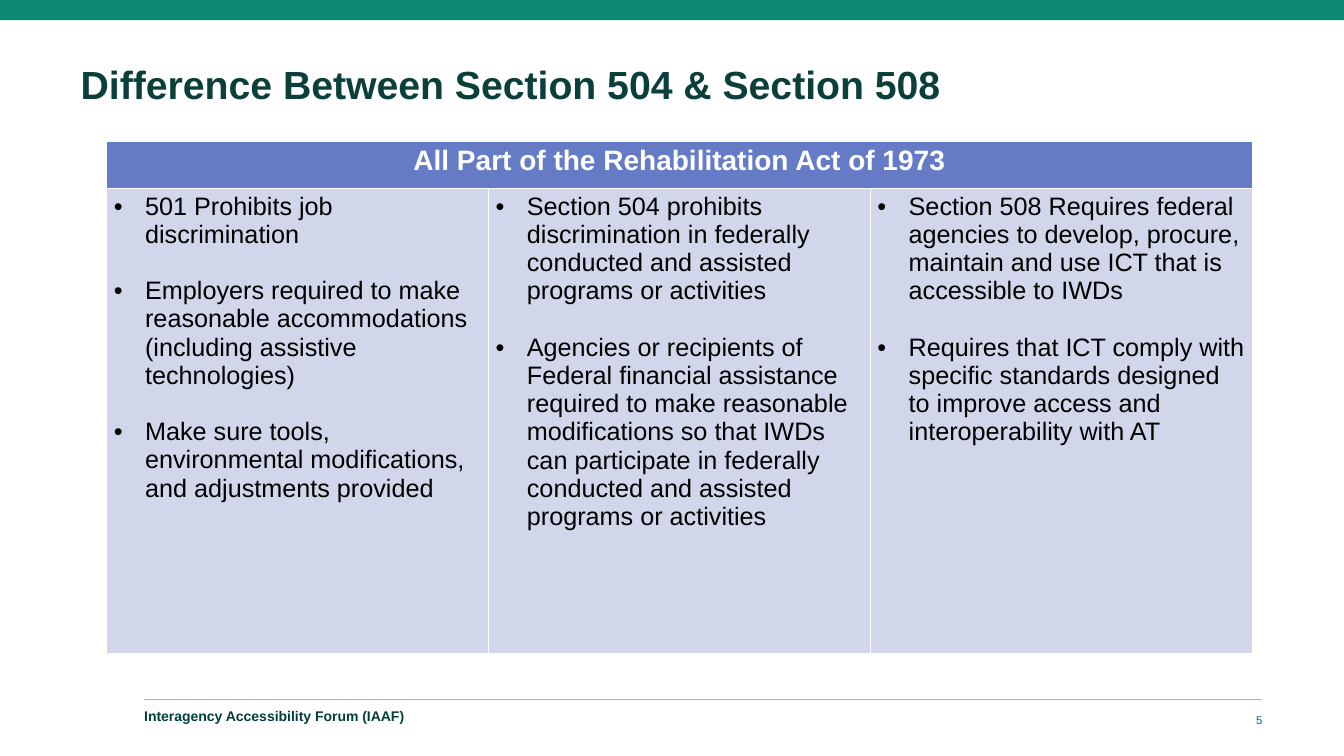
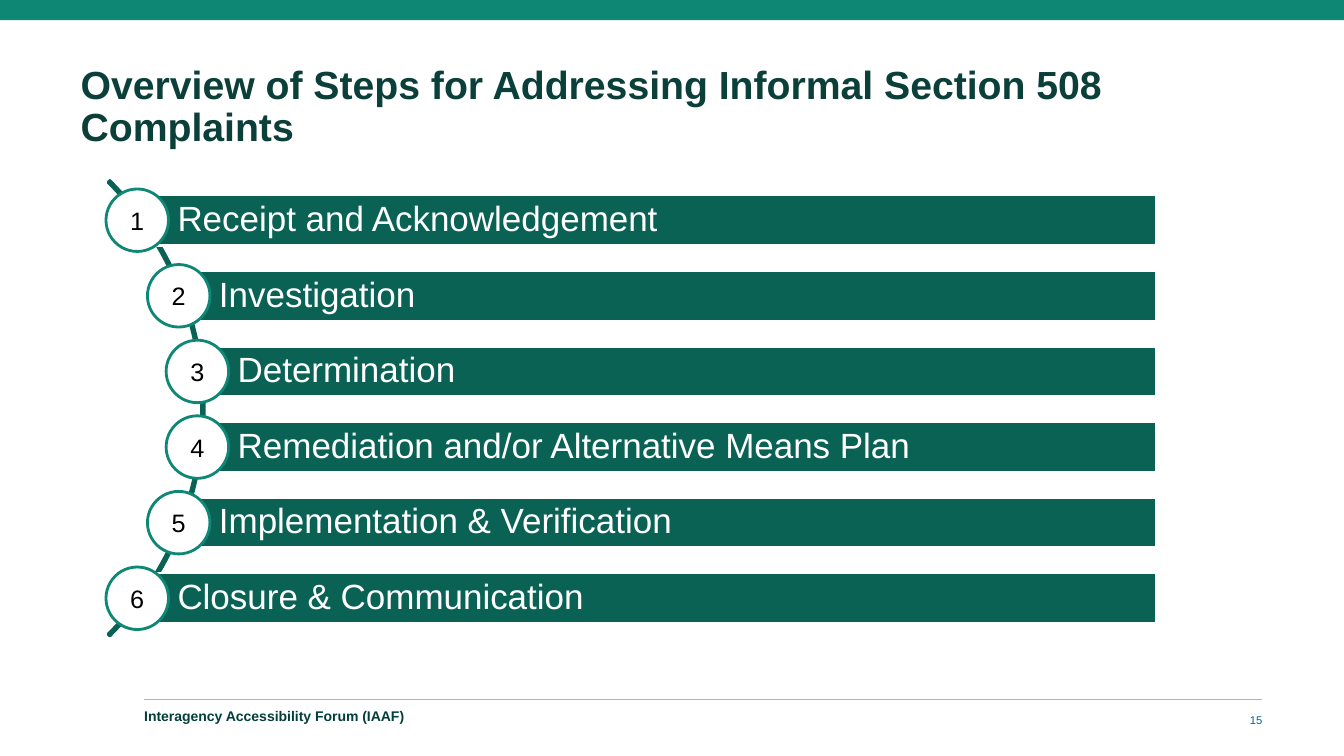
from math import sqrt

from lxml import etree
from pptx import Presentation
from pptx.dml.color import RGBColor
from pptx.enum.shapes import MSO_CONNECTOR, MSO_SHAPE
from pptx.enum.text import MSO_ANCHOR, MSO_AUTO_SIZE, PP_ALIGN
from pptx.oxml.ns import qn
from pptx.util import Inches, Pt

LEFT, CENTER, RIGHT = PP_ALIGN.LEFT, PP_ALIGN.CENTER, PP_ALIGN.RIGHT
TOP, MIDDLE = MSO_ANCHOR.TOP, MSO_ANCHOR.MIDDLE
RECTANGLE, OVAL, BLOCK_ARC = MSO_SHAPE.RECTANGLE, MSO_SHAPE.OVAL, MSO_SHAPE.BLOCK_ARC

FONT = "Arial"
WHITE, BLACK = "FFFFFF", "000000"
TEAL, DEEP_TEAL = "0E8775", "0A6255"
TITLE_INK, FOOTER_INK, NUMBER_INK = "0B3F3A", "033F3A", "006197"
RULE_GRAY, HEADER_BLUE, CELL_BLUE = "B2B2B2", "667BC6", "D2D6EA"

SLIDE_WIDTH, SLIDE_HEIGHT = 13.33, 7.5
FOOTER_LEFT, FOOTER_RIGHT, FOOTER_TOP = 1.43, 12.52, 7.04

FOOTER = "Interagency Accessibility Forum (IAAF)"
SECTIONS_TITLE = "Difference Between Section 504 & Section 508"
SECTIONS_HEADER = "All Part of the Rehabilitation Act of 1973"
SECTIONS = [
    ["501 Prohibits job discrimination",
     "Employers required to make reasonable accommodations (including assistive technologies)",
     "Make sure tools, environmental modifications, and adjustments provided"],
    ["Section 504 prohibits discrimination in federally conducted and assisted programs "
     "or activities",
     "Agencies or recipients of Federal financial assistance required to make reasonable "
     "modifications so that IWDs can participate in federally conducted and assisted "
     "programs or activities"],
    ["Section 508 Requires federal agencies to develop, procure, maintain and use ICT "
     "that is accessible to IWDs",
     "Requires that ICT comply with specific standards designed to improve access and "
     "interoperability with AT"],
]
STEPS_TITLE = "Overview of Steps for Addressing Informal Section 508 Complaints"
STEPS = [
    "Receipt and Acknowledgement",
    "Investigation",
    "Determination",
    "Remediation and/or Alternative Means Plan",
    "Implementation & Verification",
    "Closure & Communication",
]


def color(value):
    return RGBColor.from_string(value)


def inches(*values):
    return [Inches(value) for value in values]


def style(para, size, ink, bold=False, align=LEFT, spacing=1.0):
    para.alignment, para.line_spacing = align, spacing
    font = para.font
    font.name, font.size, font.bold = FONT, Pt(size), bold
    font.color.rgb = color(ink)


def set_frame(frame, anchor, margins):
    frame.word_wrap, frame.vertical_anchor = True, anchor
    (frame.margin_left, frame.margin_top,
     frame.margin_right, frame.margin_bottom) = inches(*margins)


def write(frame, text, size, ink, anchor=MIDDLE, margins=(0, 0, 0, 0), **options):
    set_frame(frame, anchor, margins)
    frame.text = text
    style(frame.paragraphs[0], size, ink, **options)


def add_shape(page, kind, box, fill, line=None):
    shape = page.shapes.add_shape(kind, *inches(*box))
    shape.shadow.inherit = False
    shape.fill.solid()
    shape.fill.fore_color.rgb = color(fill)
    if line:
        shape.line.color.rgb, shape.line.width = color(line), Pt(2)
    else:
        shape.line.fill.background()
    return shape


def add_label(page, box, *args, **options):
    label = page.shapes.add_textbox(*inches(*box))
    write(label.text_frame, *args, **options)
    return label


def add_shared_parts(page):
    """Draw the band, rule and footer, then move them to the layout."""
    layout = page.slide_layout
    band = add_shape(page, RECTANGLE, (0, 0, SLIDE_WIDTH, 0.2), TEAL)
    rule = page.shapes.add_connector(
        MSO_CONNECTOR.STRAIGHT, *inches(FOOTER_LEFT, 6.94, FOOTER_RIGHT, 6.94))
    rule.line.color.rgb, rule.line.width = color(RULE_GRAY), Pt(0.75)
    etree.SubElement(rule._element.spPr, qn("a:effectLst"))
    footer = add_label(page, (FOOTER_LEFT, FOOTER_TOP, 7.01, 0.19), FOOTER, 10,
                       FOOTER_INK, bold=True, spacing=0.5)
    for number, part in enumerate((band, rule, footer), start=20):
        part._element.xpath(".//p:cNvPr")[0].set("id", str(number))
        layout.shapes._spTree.append(part._element)


def add_page(deck, title, title_height, number):
    page = deck.slides.add_slide(deck.slide_layouts.get_by_name("Title Only"))
    heading = page.shapes.title
    heading.left, heading.top, heading.width, heading.height = inches(
        0.8, 0.6, 11.73, title_height)
    write(heading.text_frame, title, 28, TITLE_INK, anchor=TOP,
          margins=(0, 0.05, 0, 0), bold=True, spacing=0.9)
    heading.text_frame.auto_size = MSO_AUTO_SIZE.SHAPE_TO_FIT_TEXT
    add_label(page, (FOOTER_RIGHT - 0.58, FOOTER_TOP, 0.58, 0.2), str(number), 8,
              NUMBER_INK, align=RIGHT)
    return page


def add_bullet(para):
    properties = para._p.get_or_add_pPr()
    properties.set("marL", str(Inches(0.31)))
    properties.set("indent", str(Inches(-0.31)))
    etree.SubElement(properties, qn("a:buFont")).set("typeface", FONT)
    etree.SubElement(properties, qn("a:buChar")).set("char", "•")


def fill_cell(cell, fill):
    cell.fill.solid()
    cell.fill.fore_color.rgb = color(fill)
    cell.margin_left = cell.margin_right = Inches(0.07)
    cell.margin_top = cell.margin_bottom = Inches(0.04)


def add_sections_table(page):
    heights = (0.47, 4.61)
    table = page.shapes.add_table(
        2, len(SECTIONS), *inches(1.06, 1.4, 11.36, sum(heights))).table
    table.horz_banding = False
    for row, height in zip(table.rows, heights):
        row.height = Inches(height)
    header = table.cell(0, 0)
    header.merge(table.cell(0, len(SECTIONS) - 1))
    fill_cell(header, HEADER_BLUE)
    header.text = SECTIONS_HEADER
    style(header.text_frame.paragraphs[0], 20, WHITE, bold=True, align=CENTER)
    for column, points in enumerate(SECTIONS):
        cell = table.cell(1, column)
        fill_cell(cell, CELL_BLUE)
        cell.text = "\n".join(points)
        for index, para in enumerate(cell.text_frame.paragraphs):
            add_bullet(para)
            style(para, 18, BLACK)
            if index:
                para.space_before = Pt(20)


def add_steps(page):
    """Place numbered bars whose left ends follow a circular arc."""
    arc_x, arc_y, arc_size = -1.17, 4.05, 6.39
    radius, pitch, bar_height, badge, bar_right = 3.15, 0.75, 0.5, 0.62, 11.47
    arc = add_shape(page, BLOCK_ARC,
                    (arc_x - arc_size / 2, arc_y - arc_size / 2, arc_size, arc_size),
                    DEEP_TEAL, DEEP_TEAL)
    for index, value in enumerate((189, 27, 0.004)):
        arc.adjustments[index] = value
    for index, step in enumerate(STEPS):
        offset = (index - (len(STEPS) - 1) / 2) * pitch
        x, y = arc_x + sqrt(radius ** 2 - offset ** 2), arc_y + 0.01 + offset
        bar = add_shape(page, RECTANGLE,
                        (x, y - bar_height / 2, bar_right - x, bar_height),
                        DEEP_TEAL, WHITE)
        write(bar.text_frame, step, 25, WHITE, margins=(0.4, 0.07, 0.07, 0.07),
              spacing=0.9)
        circle = add_shape(page, OVAL, (x - badge / 2, y - badge / 2, badge, badge),
                           WHITE, TEAL)
        write(circle.text_frame, str(index + 1), 18, BLACK, margins=(0.1,) * 4,
              align=CENTER)


def main():
    deck = Presentation()
    deck.slide_width, deck.slide_height = inches(SLIDE_WIDTH, SLIDE_HEIGHT)
    sections_page = add_page(deck, SECTIONS_TITLE, 0.47, 5)
    add_shared_parts(sections_page)
    add_sections_table(sections_page)
    add_steps(add_page(deck, STEPS_TITLE, 0.9, 15))
    deck.save("out.pptx")


if __name__ == "__main__":
    main()
